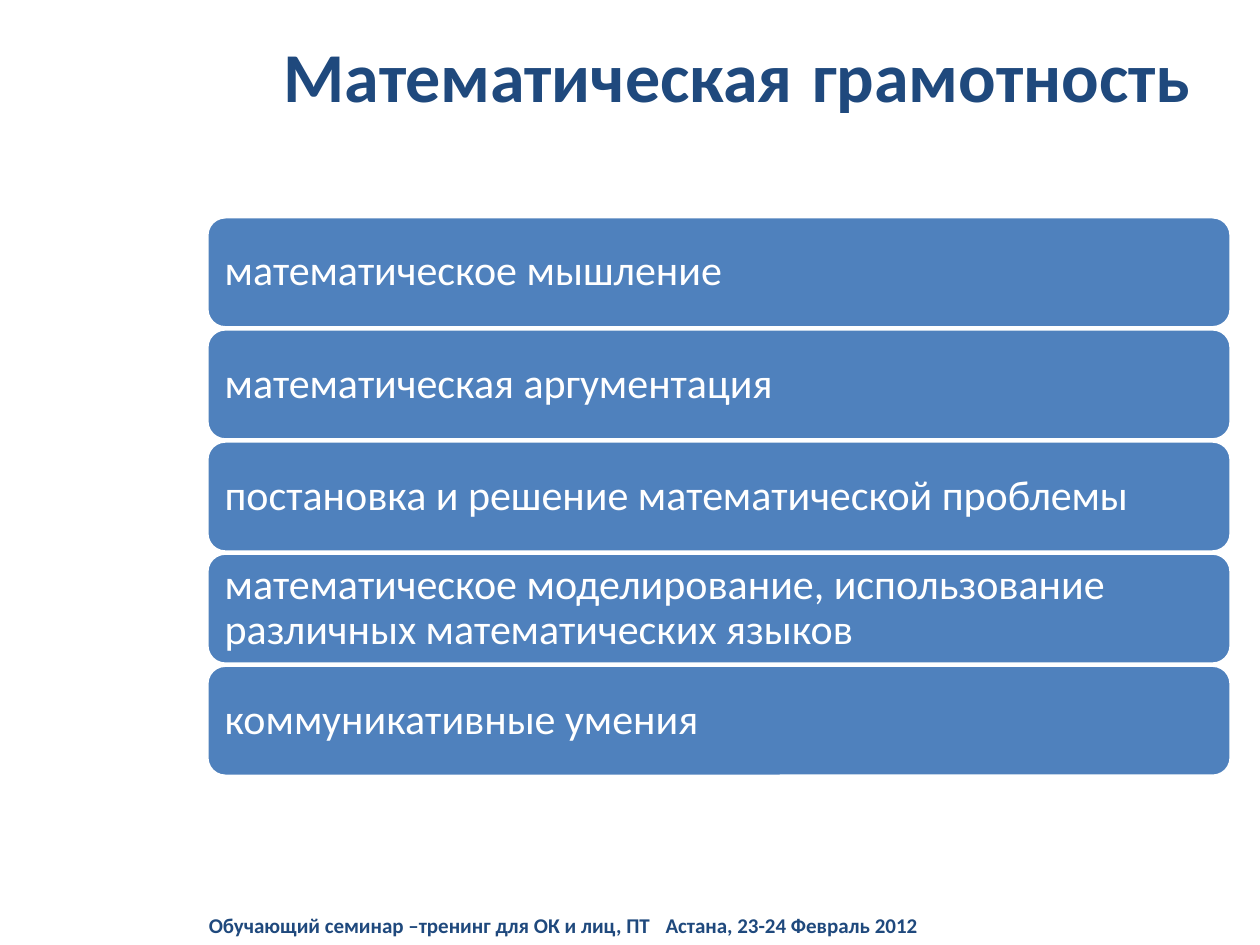
from dataclasses import dataclass

from lxml import etree
from pptx import Presentation
from pptx import util as u
from pptx.dml.color import RGBColor
from pptx.enum import shapes, text
from pptx.oxml.ns import qn


@dataclass(frozen=True)
class Theme:
    font: str = "Calibri"
    gap_font: str = "DejaVu Sans"
    navy: RGBColor = RGBColor(0x1F, 0x49, 0x7D)
    blue: RGBColor = RGBColor(0x4F, 0x81, 0xBD)
    white: RGBColor = RGBColor(0xFF, 0xFF, 0xFF)
    title_size: u.Pt = u.Pt(40)
    gap_size: u.Pt = u.Pt(32)
    skill_size: u.Pt = u.Pt(24)
    footer_size: u.Pt = u.Pt(12)


THEME = Theme()

SKILLS = (
    "математическое мышление",
    "математическая аргументация",
    "постановка и решение математической проблемы",
    "математическое моделирование, использование различных математических языков",
    "коммуникативные умения",
)
SKILL_LEFT, SKILL_TOP = u.Cm(4.17), u.Cm(4.37)
SKILL_WIDTH, SKILL_HEIGHT = u.Cm(20.65), u.Cm(2.24)
SKILL_PITCH = u.Cm(2.26)


def style_run(run, size, color, bold=False, name=THEME.font):
    run.font.name = name
    run.font.size = size
    run.font.bold = bold
    run.font.color.rgb = color


def add_text_area(slide, left, top, width, height):
    """Add a wrapping, vertically centred text box and return its first paragraph."""
    frame = slide.shapes.add_textbox(left, top, width, height).text_frame
    frame.word_wrap = True
    frame.vertical_anchor = text.MSO_ANCHOR.MIDDLE
    return frame.paragraphs[0]


def add_title(slide):
    title = add_text_area(slide, u.Cm(4.32), u.Cm(0), u.Cm(21.08), u.Cm(3))
    title.alignment = text.PP_ALIGN.CENTER
    for words, size, name in (
        ("Математическая", THEME.title_size, THEME.font),
        (" ", THEME.gap_size, THEME.gap_font),
        ("грамотность", THEME.title_size, THEME.font),
    ):
        run = title.add_run()
        run.text = words
        style_run(run, size, THEME.navy, bold=True, name=name)


def add_skill(slide, top, skill):
    bar = slide.shapes.add_shape(
        shapes.MSO_SHAPE.ROUNDED_RECTANGLE, SKILL_LEFT, top, SKILL_WIDTH, SKILL_HEIGHT
    )
    bar.shadow.inherit = False
    bar.fill.solid()
    bar.fill.fore_color.rgb = THEME.blue
    bar.line.color.rgb = THEME.white
    bar.line.width = u.Pt(2)

    frame = bar.text_frame
    frame.text = skill
    frame.word_wrap = True
    frame.vertical_anchor = text.MSO_ANCHOR.MIDDLE
    frame.margin_left = frame.margin_right = u.Cm(0.25)
    frame.margin_top = frame.margin_bottom = u.Cm(0.25)
    label = frame.paragraphs[0]
    label.alignment = text.PP_ALIGN.LEFT
    label.line_spacing = 0.9
    style_run(label.runs[0], THEME.skill_size, THEME.white)


def add_tab_stop(paragraph, position):
    stops = etree.SubElement(paragraph._p.get_or_add_pPr(), qn("a:tabLst"))
    etree.SubElement(stops, qn("a:tab"), pos=str(int(position)), algn="l")


def add_footer(slide):
    footer = add_text_area(slide, u.Cm(3.96), u.Cm(18.24), u.Cm(16.87), u.Cm(0.81))
    add_tab_stop(footer, u.Cm(9.21))
    footer.text = "Обучающий семинар –тренинг для ОК и лиц, ПТ\tАстана, 23-24 Февраль 2012"
    style_run(footer.runs[0], THEME.footer_size, THEME.navy, bold=True)


def main():
    deck = Presentation()
    deck.slide_width, deck.slide_height = u.Cm(25.4), u.Cm(19.05)
    slide = deck.slides.add_slide(deck.slide_layouts[6])
    add_title(slide)
    for row, skill in enumerate(SKILLS):
        add_skill(slide, SKILL_TOP + row * SKILL_PITCH, skill)
    add_footer(slide)
    deck.save("out.pptx")


if __name__ == "__main__":
    main()
